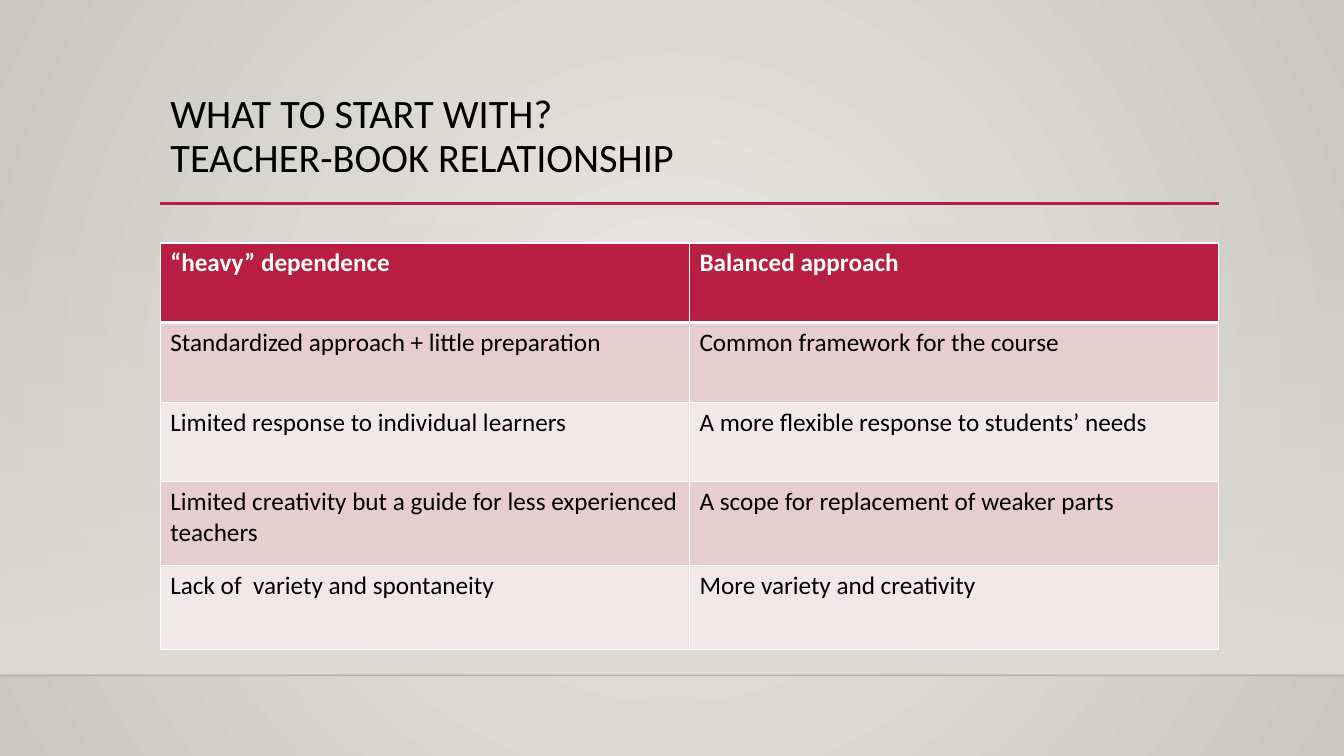
from typing import NamedTuple

from lxml import etree
from pptx import Presentation
from pptx.dml.color import RGBColor
from pptx.dml.fill import FillFormat
from pptx.enum.shapes import MSO_CONNECTOR, MSO_SHAPE
from pptx.enum.text import MSO_ANCHOR, MSO_AUTO_SIZE, PP_ALIGN
from pptx.oxml import parse_xml
from pptx.oxml.ns import nsdecls, qn
from pptx.util import Pt

RECT = MSO_SHAPE.RECTANGLE
STRAIGHT = MSO_CONNECTOR.STRAIGHT
TOP = MSO_ANCHOR.TOP
LEFT = PP_ALIGN.LEFT
NO_FIT = MSO_AUTO_SIZE.NONE

CRIMSON = RGBColor(0xB7, 0x1E, 0x42)
ROSE = RGBColor(0xE6, 0xCD, 0xCF)
PALE_ROSE = RGBColor(0xF3, 0xE8, 0xE9)
WHITE = RGBColor(0xFF, 0xFF, 0xFF)
BLACK = RGBColor(0x00, 0x00, 0x00)
FLOOR_LINE = RGBColor(0x00, 0x00, 0x01)
WALL_LIGHT = RGBColor(0xEC, 0xEA, 0xE7)
WALL_DARK = RGBColor(0xCA, 0xC7, 0xC1)
HAZE = RGBColor(0xDF, 0xDB, 0xD5)

FONT = "Calibri"
SLIDE_W, SLIDE_H = 960, 540
MARGIN_X = 114.5
CONTENT_W = 756
FLOOR_Y = 482.4
HAZE_Y = 159.1
TABLE_Y = 173.5
ROW_HEIGHTS = (56.9, 56.9, 56.9, 59.8, 59.8)
GRID_WIDTH, HEADER_RULE_WIDTH = 1, 3

TITLE_LINES = ("WHAT TO START WITH?", "TEACHER-BOOK RELATIONSHIP")


class Comparison(NamedTuple):
    dependent: str
    balanced: str


class Rule(NamedTuple):
    x1: float
    x2: float
    y: float
    color: RGBColor
    width: float
    opacity: int = 100


COMPARISONS = (
    Comparison("“heavy” dependence", "Balanced approach"),
    Comparison("Standardized approach + little preparation",
               "Common framework for the course"),
    Comparison("Limited response to individual learners",
               "A more flexible response to students’ needs"),
    Comparison("Limited creativity but a guide for less experienced teachers",
               "A scope for replacement of weaker parts"),
    Comparison("Lack of  variety and spontaneity", "More variety and creativity"),
)
RULES = (
    Rule(0, SLIDE_W, FLOOR_Y, FLOOR_LINE, 1, 20),
    Rule(MARGIN_X, 871, 145.4, CRIMSON, 2.5),
)


def set_opacity(color_el, percent: int) -> None:
    etree.SubElement(color_el, qn("a:alpha")).set("val", str(percent * 1000))


def set_gradient(fill: FillFormat, start: RGBColor, end: RGBColor) -> None:
    """Apply a two-stop gradient running from top to bottom."""
    fill.gradient()
    fill.gradient_angle = 270
    for stop, color, position in zip(fill.gradient_stops, (start, end), (0, 1)):
        stop.color.rgb = color
        stop.position = position


def paint_background(slide) -> None:
    set_gradient(slide.background.fill, WALL_LIGHT, WALL_DARK)
    gradient = slide._element.find(".//" + qn("a:gradFill"))
    gradient.replace(gradient.find(qn("a:lin")), parse_xml(
        f'<a:path {nsdecls("a")} path="circle">'
        '<a:fillToRect l="50000" t="50000" r="50000" b="50000"/></a:path>'))


def add_haze(slide) -> None:
    """Add the band that fades in towards the floor line."""
    sp = slide.shapes.add_shape(RECT, Pt(0), Pt(HAZE_Y), Pt(SLIDE_W),
                                Pt(FLOOR_Y - HAZE_Y))
    sp.shadow.inherit = False
    sp.line.fill.background()
    set_gradient(sp.fill, HAZE, HAZE)
    set_opacity(sp._element.spPr.find(".//" + qn("a:srgbClr")), 0)


def add_rule(slide, rule: Rule) -> None:
    line = slide.shapes.add_connector(STRAIGHT, Pt(rule.x1), Pt(rule.y),
                                      Pt(rule.x2), Pt(rule.y))
    line.line.color.rgb = rule.color
    line.line.width = Pt(rule.width)
    props = line._element.spPr
    if rule.opacity < 100:
        set_opacity(props.find(".//" + qn("a:srgbClr")), rule.opacity)
    etree.SubElement(props, qn("a:effectLst"))


def add_run(p, text: str, size: float, color: RGBColor, bold: bool = False) -> None:
    r = p.add_run()
    r.text = text
    r.font.name = FONT
    r.font.size = Pt(size)
    r.font.bold = bold
    r.font.color.rgb = color


def fill_title(slide) -> None:
    title = slide.shapes.title
    title.left, title.top = Pt(MARGIN_X), Pt(63.4)
    title.width, title.height = Pt(CONTENT_W), Pt(110)
    tf = title.text_frame
    tf.word_wrap = True
    tf.auto_size = NO_FIT
    tf.vertical_anchor = TOP
    p = tf.paragraphs[0]
    p.alignment = LEFT
    p.line_spacing = 0.9
    for i, text in enumerate(TITLE_LINES):
        if i:
            p.add_line_break()
        add_run(p, text, 28.8, BLACK)


def set_borders(cell, top: float, bottom: float) -> None:
    tc_pr = cell._tc.get_or_add_tcPr()
    widths = {"lnL": GRID_WIDTH, "lnR": GRID_WIDTH, "lnT": top, "lnB": bottom}
    for tag, width in widths.items():
        tc_pr.append(parse_xml(
            f'<a:{tag} {nsdecls("a")} w="{Pt(width)}"><a:solidFill>'
            f'<a:srgbClr val="{WHITE}"/></a:solidFill></a:{tag}>'))


def add_comparison_table(slide) -> None:
    columns = len(Comparison._fields)
    table = slide.shapes.add_table(
        len(COMPARISONS), columns, Pt(MARGIN_X), Pt(TABLE_Y),
        Pt(CONTENT_W), Pt(sum(ROW_HEIGHTS))).table
    for column in table.columns:
        column.width = Pt(CONTENT_W / columns)
    for i, (comparison, height) in enumerate(zip(COMPARISONS, ROW_HEIGHTS)):
        table.rows[i].height = Pt(height)
        header = i == 0
        color = CRIMSON if header else ROSE if i % 2 else PALE_ROSE
        for j, text in enumerate(comparison):
            cell = table.cell(i, j)
            set_borders(cell, HEADER_RULE_WIDTH if i == 1 else GRID_WIDTH,
                        HEADER_RULE_WIDTH if header else GRID_WIDTH)
            cell.fill.solid()
            cell.fill.fore_color.rgb = color
            add_run(cell.text_frame.paragraphs[0], text, 18,
                    WHITE if header else BLACK, header)


def main() -> None:
    prs = Presentation()
    prs.slide_width, prs.slide_height = Pt(SLIDE_W), Pt(SLIDE_H)
    slide = prs.slides.add_slide(prs.slide_layouts[5])
    paint_background(slide)
    add_haze(slide)
    for rule in RULES:
        add_rule(slide, rule)
    fill_title(slide)
    add_comparison_table(slide)
    prs.save("out.pptx")


if __name__ == "__main__":
    main()
